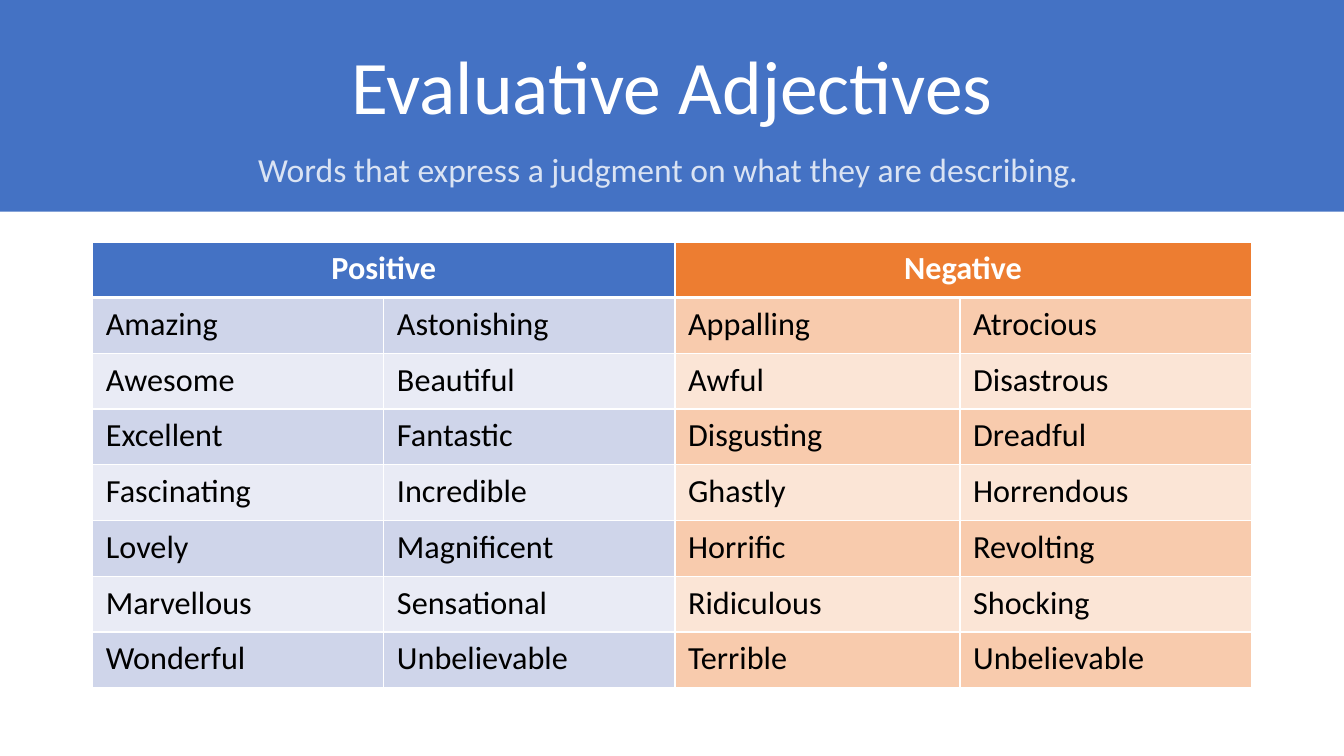
from lxml.etree import SubElement
from pptx import Presentation
from pptx.dml.color import RGBColor
from pptx.enum.shapes import MSO_SHAPE as Shape
from pptx.enum.text import MSO_ANCHOR as Anchor, PP_ALIGN as Align
from pptx.oxml.ns import qn
from pptx.util import Inches, Pt

WHITE = RGBColor(0xFF, 0xFF, 0xFF)
BLACK = RGBColor(0, 0, 0)
BLUE = RGBColor(0x44, 0x72, 0xC4)
PALE_BLUE = RGBColor(0xDA, 0xE3, 0xF3)
ORANGE = RGBColor(0xED, 0x7D, 0x31)
BLUE_BANDS = (RGBColor(0xCF, 0xD5, 0xEA), RGBColor(0xE9, 0xEB, 0xF5))
ORANGE_BANDS = (RGBColor(0xF8, 0xCB, 0xAD), RGBColor(0xFB, 0xE5, 0xD6))

WIDTH, HEIGHT = Inches(13.33), Inches(7.5)
MARGIN = Inches(0.92)
COLUMN_SHARES = (2.89, 2.89, 2.83, 2.89)
GROUPS = (("Positive", BLUE, BLUE_BANDS), ("Negative", ORANGE, ORANGE_BANDS))
TITLE = {"size": Pt(54), "color": WHITE}
SUBTITLE = {"size": Pt(24), "color": PALE_BLUE}
HEADING = {"size": Pt(23), "color": WHITE, "bold": True}
WORD = {"size": Pt(23), "color": BLACK, "bold": False}
CELL_MARGINS = {
    "margin_left": Inches(0.13), "margin_right": Inches(0.13),
    "margin_top": Inches(0.07), "margin_bottom": Inches(0.07),
}
WORDS = (
    ("Amazing", "Astonishing", "Appalling", "Atrocious"),
    ("Awesome", "Beautiful", "Awful", "Disastrous"),
    ("Excellent", "Fantastic", "Disgusting", "Dreadful"),
    ("Fascinating", "Incredible", "Ghastly", "Horrendous"),
    ("Lovely", "Magnificent", "Horrific", "Revolting"),
    ("Marvellous", "Sensational", "Ridiculous", "Shocking"),
    ("Wonderful", "Unbelievable", "Terrible", "Unbelievable"),
)


def write(frame, text, style, align):
    """Write one styled paragraph into a text frame and return it."""
    paragraph = frame.paragraphs[0]
    paragraph.alignment = align
    run = paragraph.add_run()
    run.text = text
    run.font.name = "Calibri"
    for name, value in style.items():
        if name == "color":
            run.font.color.rgb = value
        else:
            setattr(run.font, name, value)
    return paragraph


def add_line(slide, box, text, style, anchor):
    """Add a centred line of text in the given box."""
    frame = slide.shapes.add_textbox(*box).text_frame
    frame.word_wrap = True
    frame.vertical_anchor = anchor
    write(frame, text, style, Align.CENTER).line_spacing = 0.9


def add_header(slide, left, top, width, height):
    """Draw the blue band with its title and subtitle."""
    band = slide.shapes.add_shape(Shape.RECTANGLE, left, top, width, height)
    band.shadow.inherit = False
    band.fill.solid()
    band.fill.fore_color.rgb = BLUE
    band.line.fill.background()
    lines = (
        ("Evaluative Adjectives", TITLE, Anchor.BOTTOM, 0.15, 0.49),
        ("Words that express a judgment on what they are describing. ",
         SUBTITLE, Anchor.TOP, 0.7, 0.22),
    )
    for text, style, anchor, start, share in lines:
        box = (left + MARGIN, top + int(height * start),
               width - 2 * MARGIN, int(height * share))
        add_line(slide, box, text, style, anchor)


def format_cell(cell, fill, bottom_width):
    """Give a cell white borders, margins and a fill."""
    properties = cell._tc.get_or_add_tcPr()
    for side, width in (("L", 1), ("R", 1), ("T", 1), ("B", bottom_width)):
        line = SubElement(properties, qn(f"a:ln{side}"), w=str(Pt(width)))
        solid = SubElement(line, qn("a:solidFill"))
        SubElement(solid, qn("a:srgbClr"), val=str(WHITE))
    for name, value in CELL_MARGINS.items():
        setattr(cell, name, value)
    cell.fill.solid()
    cell.fill.fore_color.rgb = fill


def add_word_table(slide, left, top, width, height):
    """Build the table of positive and negative adjectives."""
    row_count = len(WORDS) + 1
    table = slide.shapes.add_table(
        row_count, len(COLUMN_SHARES), left, top, width, height).table
    for column, share in zip(table.columns, COLUMN_SHARES):
        column.width = int(width * share / sum(COLUMN_SHARES))
    for row in table.rows:
        row.height = height // row_count

    for index, (heading, color, _) in enumerate(GROUPS):
        first, second = table.cell(0, 2 * index), table.cell(0, 2 * index + 1)
        for cell in (first, second):
            format_cell(cell, color, 3)
        first.merge(second)
        write(first.text_frame, heading, HEADING, Align.CENTER)

    for row_index, words in enumerate(WORDS):
        for column_index, word in enumerate(words):
            bands = GROUPS[column_index // 2][2]
            cell = table.cell(row_index + 1, column_index)
            format_cell(cell, bands[row_index % 2], 1)
            write(cell.text_frame, word, WORD, Align.LEFT)


def main():
    """Build and save the presentation."""
    presentation = Presentation()
    presentation.slide_width, presentation.slide_height = WIDTH, HEIGHT
    slide = presentation.slides.add_slide(presentation.slide_layouts[6])
    add_header(slide, 0, 0, WIDTH, int(HEIGHT * 0.28))
    add_word_table(slide, MARGIN, int(HEIGHT * 0.32),
                   WIDTH - 2 * MARGIN, int(HEIGHT * 0.59))
    presentation.save("out.pptx")


if __name__ == "__main__":
    main()
